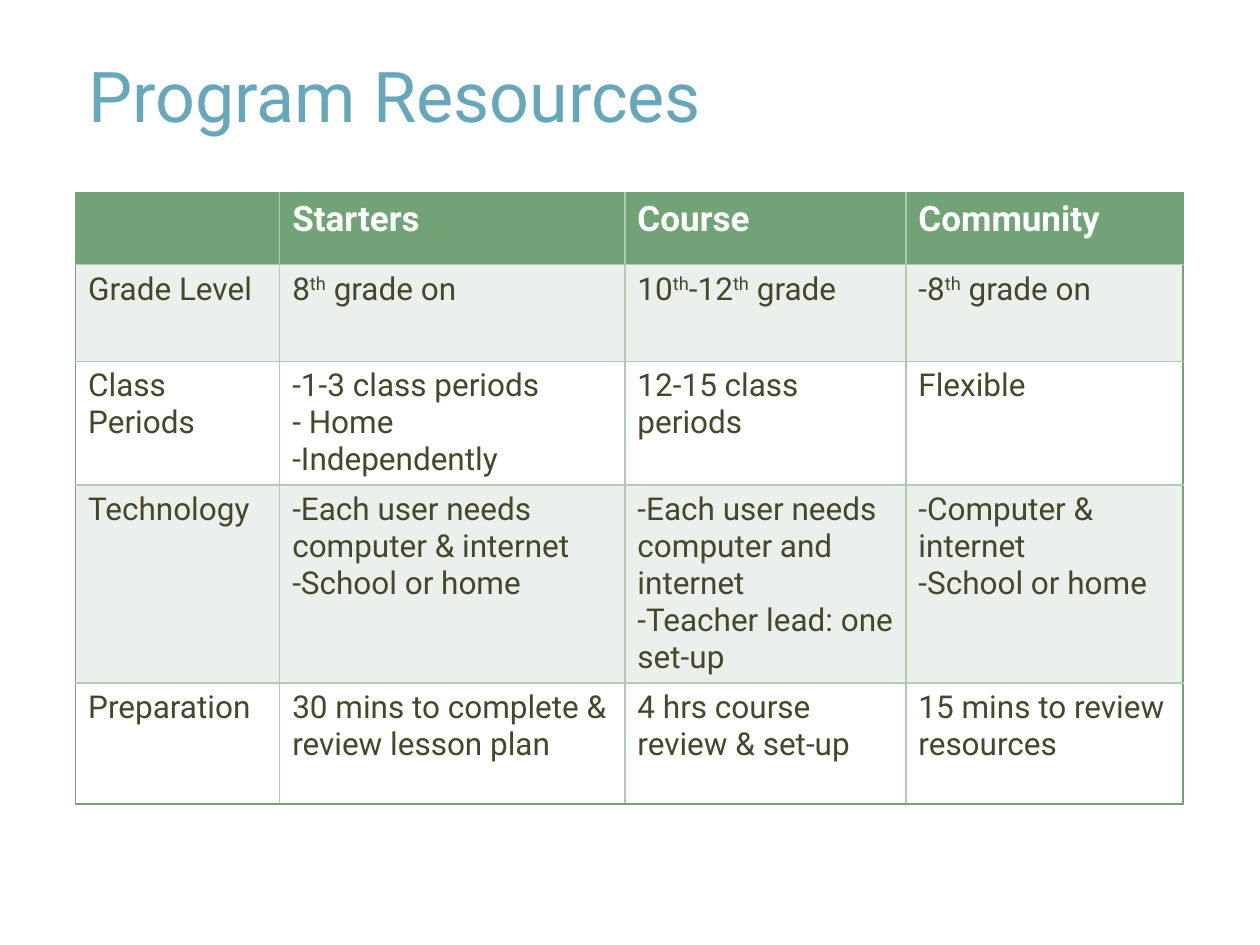
from lxml import etree
from pptx import Presentation
from pptx import util as u
from pptx.dml.color import RGBColor
from pptx.enum import text
from pptx.oxml import ns

GREEN = "72A376"
PALE_GREEN = "B0CCB0"
BAND = "EBF0EC"
WHITE = "FFFFFF"
INK = "45472B"
TITLE_BLUE = "66A7B9"

COLUMN_WIDTHS = [1.62, 2.74, 2.23, 2.2]
ROW_HEIGHTS = [0.57, 0.77, 0.98, 1.57, 0.96]
RESOURCES = [
    ["", "Starters", "Course", "Community"],
    ["Grade Level", "8^th^ grade on", "10^th^-12^th^ grade", "-8^th^ grade on"],
    ["Class Periods", "-1-3 class periods\n- Home\n-Independently",
     "12-15 class periods", "Flexible"],
    ["Technology", "-Each user needs computer & internet\n-School or home",
     "-Each user needs computer and internet\n-Teacher lead: one set-up",
     "-Computer & internet\n-School or home"],
    ["Preparation", "30 mins to complete & review lesson plan",
     "4 hrs course review & set-up", "15 mins to review resources"],
]


def rgb(value):
    return RGBColor.from_string(value)


class SlideBuilder:
    font_name = "Roboto"

    def __init__(self, slide):
        self.slide = slide

    def style(self, paragraph, size, color, bold=False):
        font = paragraph.font
        font.name = self.font_name
        font.size = u.Pt(size)
        font.bold = bold
        font.color.rgb = rgb(color)

    def title(self, words, left, top, width, height):
        shape = self.slide.shapes.title
        shape.left, shape.top = u.Inches(left), u.Inches(top)
        shape.width, shape.height = u.Inches(width), u.Inches(height)
        frame = shape.text_frame
        frame.text = words
        frame.auto_size = text.MSO_AUTO_SIZE.NONE
        frame.vertical_anchor = text.MSO_ANCHOR.BOTTOM
        paragraph = frame.paragraphs[0]
        paragraph.alignment = text.PP_ALIGN.LEFT
        self.style(paragraph, 40, TITLE_BLUE)

    def table(self, rows, left, top, widths, heights):
        shape = self.slide.shapes.add_table(
            len(rows), len(widths), u.Inches(left), u.Inches(top),
            u.Inches(sum(widths)), u.Inches(sum(heights)))
        table = shape.table
        for column, width in zip(table.columns, widths):
            column.width = u.Inches(width)
        for row, height in zip(table.rows, heights):
            row.height = u.Inches(height)
        last_row, last_column = len(rows) - 1, len(widths) - 1
        for i, row in enumerate(rows):
            for j, words in enumerate(row):
                cell = table.cell(i, j)
                self.cell_text(cell, words, header=i == 0)
                self.borders(cell, {"L": j == 0, "R": j == last_column,
                                    "T": i == 0, "B": i == last_row})
                cell.fill.solid()
                fill = GREEN if i == 0 else BAND if i % 2 else WHITE
                cell.fill.fore_color.rgb = rgb(fill)

    def cell_text(self, cell, words, header):
        frame = cell.text_frame
        for k, line in enumerate(words.split("\n")):
            paragraph = frame.add_paragraph() if k else frame.paragraphs[0]
            if header:
                self.style(paragraph, 20, WHITE, bold=True)
            else:
                self.style(paragraph, 18, INK)
            for n, part in enumerate(line.split("^")):
                if part:
                    run = paragraph.add_run()
                    run.text = part
                    if n % 2:
                        run._r.get_or_add_rPr().set("baseline", "30000")

    def borders(self, cell, outer_sides):
        properties = cell._tc.get_or_add_tcPr()
        for side, outer in outer_sides.items():
            line = etree.SubElement(properties, ns.qn(f"a:ln{side}"), w=str(u.Pt(1)))
            fill = etree.SubElement(line, ns.qn("a:solidFill"))
            etree.SubElement(fill, ns.qn("a:srgbClr"), val=GREEN if outer else PALE_GREEN)


def main():
    presentation = Presentation()
    presentation.slide_width = u.Inches(10)
    presentation.slide_height = u.Inches(7.5)
    slide = presentation.slides.add_slide(presentation.slide_layouts[5])
    builder = SlideBuilder(slide)
    builder.title("Program Resources", 0.6, 0.12, 8.8, 1.01)
    builder.table(RESOURCES, 0.6, 1.53, COLUMN_WIDTHS, ROW_HEIGHTS)
    presentation.save("out.pptx")


if __name__ == "__main__":
    main()
